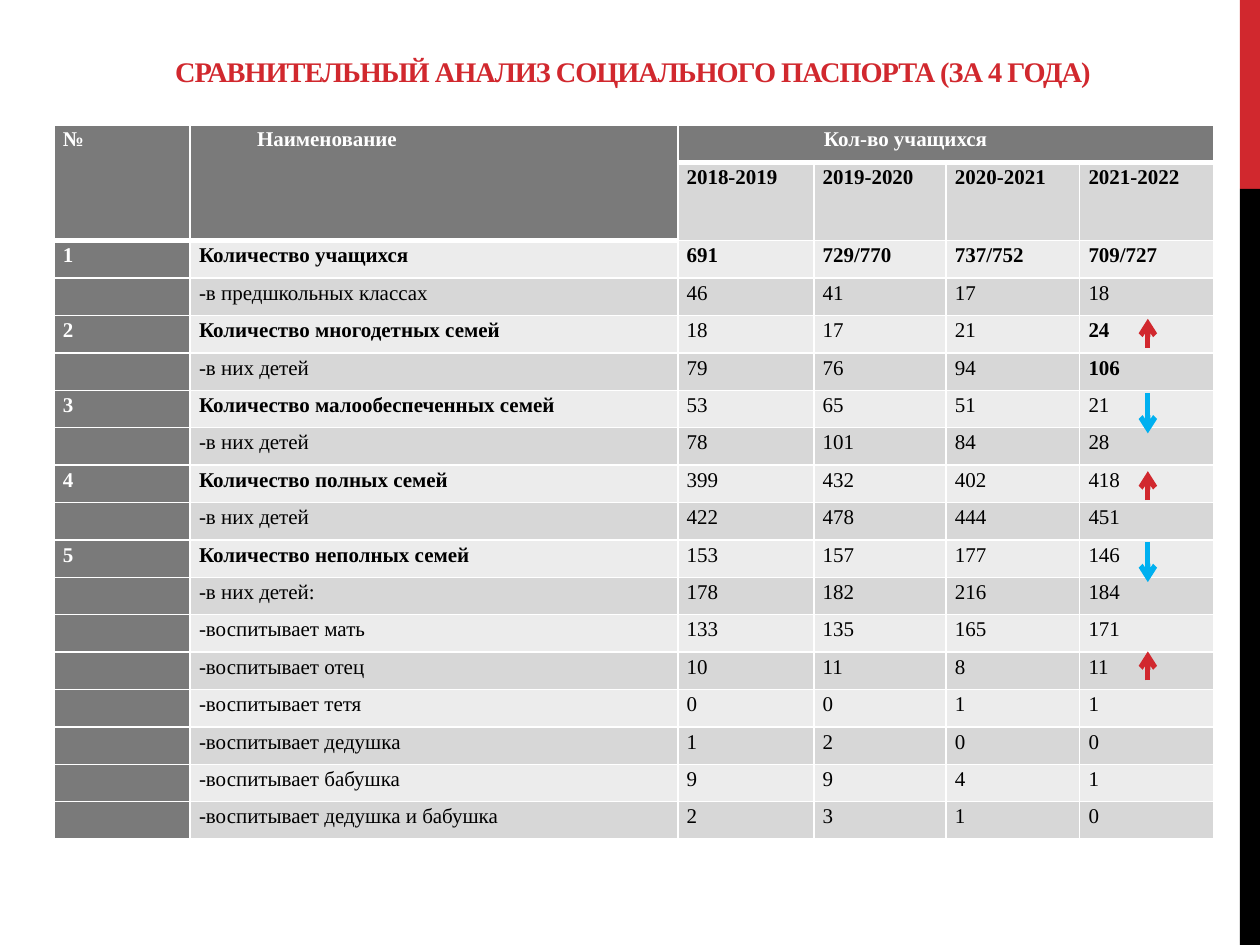
from dataclasses import dataclass

from lxml import etree
from pptx import Presentation
from pptx.dml.color import RGBColor
from pptx.enum.shapes import MSO_CONNECTOR, MSO_SHAPE
from pptx.enum.text import MSO_ANCHOR, PP_ALIGN
from pptx.oxml.ns import qn
from pptx.util import Inches, Pt


@dataclass(frozen=True)
class Theme:
    font: str = "Times New Roman"
    title_size: float = 16.2
    table_size: float = 12
    red: str = "D1282E"
    blue: str = "00B0F0"
    black: str = "000000"
    white: str = "FFFFFF"
    header: str = "7A7A7A"
    dark_band: str = "D7D7D7"
    light_band: str = "ECECEC"


THEME = Theme()
COLUMN_WIDTHS = [1.08, 3.87, 1.08, 1.05, 1.06, 1.06]
HEADER_HEIGHTS = [0.3, 0.62]
YEARS = ["2018-2019", "2019-2020", "2020-2021", "2021-2022"]
FAMILY_ROWS = [
    ("1", "Количество учащихся", "691", "729/770", "737/752", "709/727"),
    ("", "-в предшкольных классах", "46", "41", "17", "18"),
    ("2", "Количество многодетных семей", "18", "17", "21", "24"),
    ("", "-в них детей", "79", "76", "94", "106"),
    ("3", "Количество малообеспеченных семей", "53", "65", "51", "21"),
    ("", "-в них детей", "78", "101", "84", "28"),
    ("4", "Количество полных семей", "399", "432", "402", "418"),
    ("", "-в них детей", "422", "478", "444", "451"),
    ("5", "Количество неполных семей", "153", "157", "177", "146"),
    ("", "-в них детей:", "178", "182", "216", "184"),
    ("", "-воспитывает мать", "133", "135", "165", "171"),
    ("", "-воспитывает отец", "10", "11", "8", "11"),
    ("", "-воспитывает тетя", "0", "0", "1", "1"),
    ("", "-воспитывает дедушка", "1", "2", "0", "0"),
    ("", "-воспитывает бабушка", "9", "9", "4", "1"),
    ("", "-воспитывает дедушка и бабушка", "2", "3", "1", "0"),
]
BOLD_VALUES = {"691", "729/770", "737/752", "709/727", "24", "106"}
# Start and tip heights of each trend arrow
TRENDS = [(2.76, 2.53), (3.12, 3.44), (3.97, 3.74), (4.3, 4.62), (5.4, 5.17)]


def rgb(color):
    return RGBColor.from_string(color)


def write_text(frame, text, size=THEME.table_size, color=THEME.black, bold=False,
               align=PP_ALIGN.LEFT, line_spacing=None, tracking=None):
    paragraph = frame.paragraphs[0]
    paragraph.alignment = align
    paragraph.line_spacing = line_spacing
    if not text:
        # Keeps an empty cell from growing to the default text size
        etree.SubElement(paragraph._p, qn("a:endParaRPr"), sz=str(int(size * 100)))
        return
    run = paragraph.add_run()
    run.text = text
    run.font.name = THEME.font
    run.font.size = Pt(size)
    run.font.bold = bold
    run.font.color.rgb = rgb(color)
    if tracking is not None:
        run._r.get_or_add_rPr().set("spc", str(int(tracking * 100)))


def add_side_bar(slide, left, top, width, height):
    red_height = height / 5
    for y, part, color in [(top, red_height, THEME.red),
                           (top + red_height, height - red_height, THEME.black)]:
        bar = slide.shapes.add_shape(MSO_SHAPE.RECTANGLE, Inches(left), Inches(y),
                                     Inches(width), Inches(part))
        bar.shadow.inherit = False
        bar.fill.solid()
        bar.fill.fore_color.rgb = rgb(color)
        bar.line.fill.background()


def add_title(slide, left, top, width, height):
    box = slide.shapes.add_textbox(Inches(left), Inches(top), Inches(width), Inches(height))
    box.text_frame.word_wrap = True
    box.text_frame.vertical_anchor = MSO_ANCHOR.BOTTOM
    write_text(box.text_frame, "СРАВНИТЕЛЬНЫЙ АНАЛИЗ СОЦИАЛЬНОГО ПАСПОРТА (ЗА 4 ГОДА)",
               size=THEME.title_size, color=THEME.red, bold=True,
               align=PP_ALIGN.CENTER, tracking=-0.6)


def has_heavy_bottom(row, column):
    return row == 0 or (row == 1 and column < 2)


def set_borders(cell, row, column):
    widths = {"a:lnL": 1, "a:lnR": 1,
              "a:lnT": 3 if row and has_heavy_bottom(row - 1, column) else 1,
              "a:lnB": 3 if has_heavy_bottom(row, column) else 1}
    properties = cell._tc.get_or_add_tcPr()
    for tag, width in widths.items():
        line = etree.SubElement(properties, qn(tag), w=str(Pt(width)))
        fill = etree.SubElement(line, qn("a:solidFill"))
        etree.SubElement(fill, qn("a:srgbClr"), val=THEME.white)


def style_cell(cell, row, column):
    is_header = row == 0 or column == 0 or (row == 1 and column == 1)
    band = THEME.dark_band if row % 2 else THEME.light_band
    set_borders(cell, row, column)
    cell.fill.solid()
    cell.fill.fore_color.rgb = rgb(THEME.header if is_header else band)
    cell.margin_left = cell.margin_right = Inches(0.07)
    cell.margin_top = cell.margin_bottom = 0
    return THEME.white if is_header else THEME.black


def add_family_table(slide, left, top, width, height):
    rows = [("№", "Наименование", "Кол-во учащихся", "", "", ""),
            ("", "", *YEARS), *FAMILY_ROWS]
    table = slide.shapes.add_table(len(rows), len(COLUMN_WIDTHS), Inches(left), Inches(top),
                                   Inches(width), Inches(height)).table
    for column, column_width in zip(table.columns, COLUMN_WIDTHS):
        column.width = Inches(column_width)
    body_height = (height - sum(HEADER_HEIGHTS)) / len(FAMILY_ROWS)
    for row, row_height in zip(table.rows, HEADER_HEIGHTS + [body_height] * len(FAMILY_ROWS)):
        row.height = Inches(row_height)

    for r, values in enumerate(rows):
        for c, text in enumerate(values):
            cell = table.cell(r, c)
            color = style_cell(cell, r, c)
            bold = r < 2 or c == 0 or (c == 1 and values[0] != "") or (c > 1 and text in BOLD_VALUES)
            write_text(cell.text_frame, text, color=color, bold=bold, line_spacing=1.15)

    table.cell(0, 1).margin_left = Inches(0.53)
    table.cell(0, 2).margin_left = Inches(1.16)
    for c in (0, 1):
        table.cell(0, c).merge(table.cell(1, c))
    table.cell(0, 2).merge(table.cell(0, 5))


def add_trend_arrow(slide, x, start, tip):
    """Red for a rise, blue for a fall."""
    arrow = slide.shapes.add_connector(MSO_CONNECTOR.STRAIGHT, Inches(x), Inches(start),
                                       Inches(x), Inches(tip))
    arrow.line.color.rgb = rgb(THEME.red if tip < start else THEME.blue)
    arrow.line.width = Pt(3)
    etree.SubElement(arrow.line._get_or_add_ln(), qn("a:tailEnd"), type="arrow")
    etree.SubElement(arrow._element.spPr, qn("a:effectLst"))


def main():
    presentation = Presentation()
    presentation.slide_width = Inches(10)
    presentation.slide_height = Inches(7.5)
    slide = presentation.slides.add_slide(presentation.slide_layouts[6])
    add_side_bar(slide, 9.84, 0, 0.16, 7.5)
    add_title(slide, 0.91, 0.36, 8.22, 0.39)
    add_family_table(slide, 0.43, 0.99, 9.2, 5.67)
    for start, tip in TRENDS:
        add_trend_arrow(slide, 9.11, start, tip)
    presentation.save("out.pptx")


if __name__ == "__main__":
    main()
